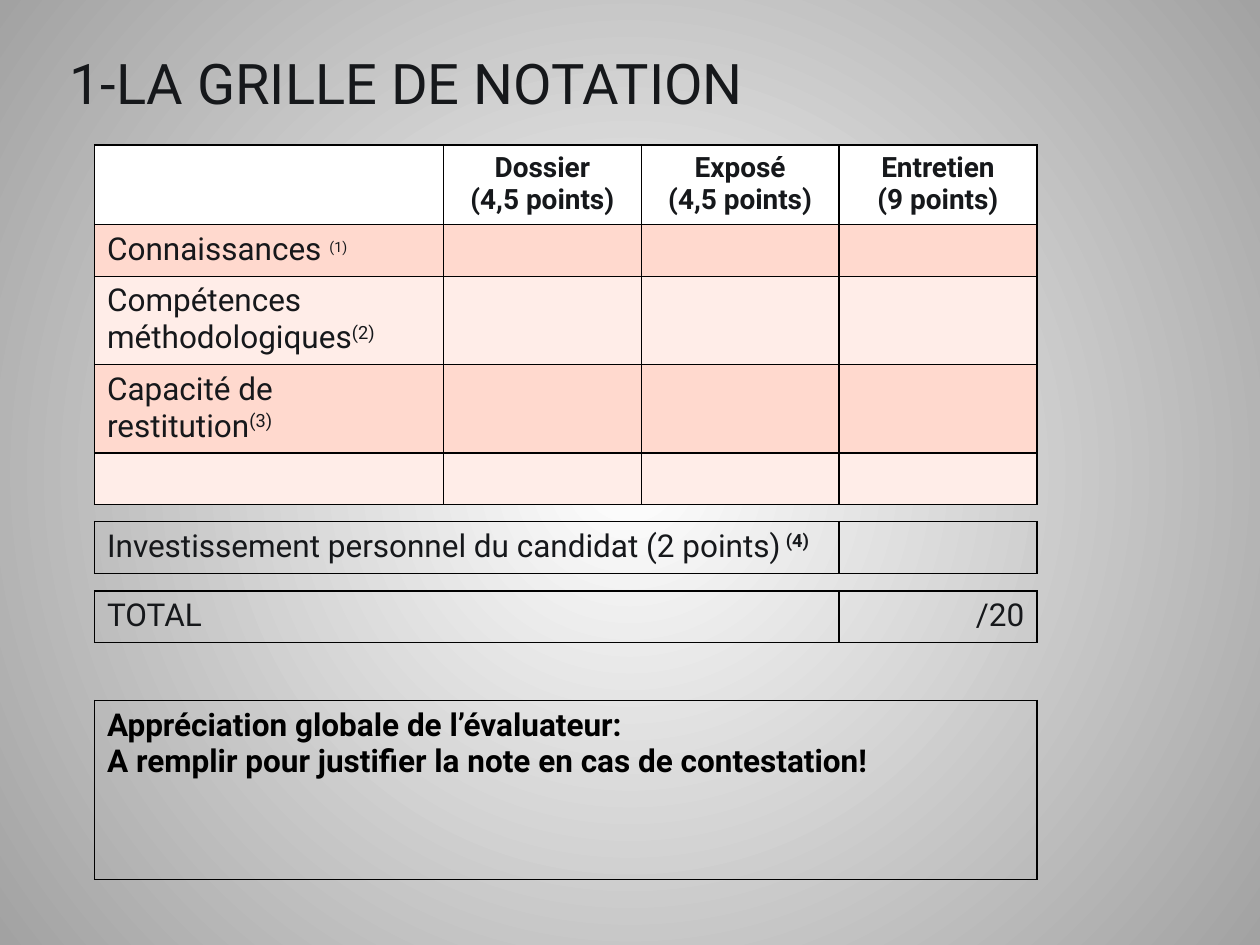
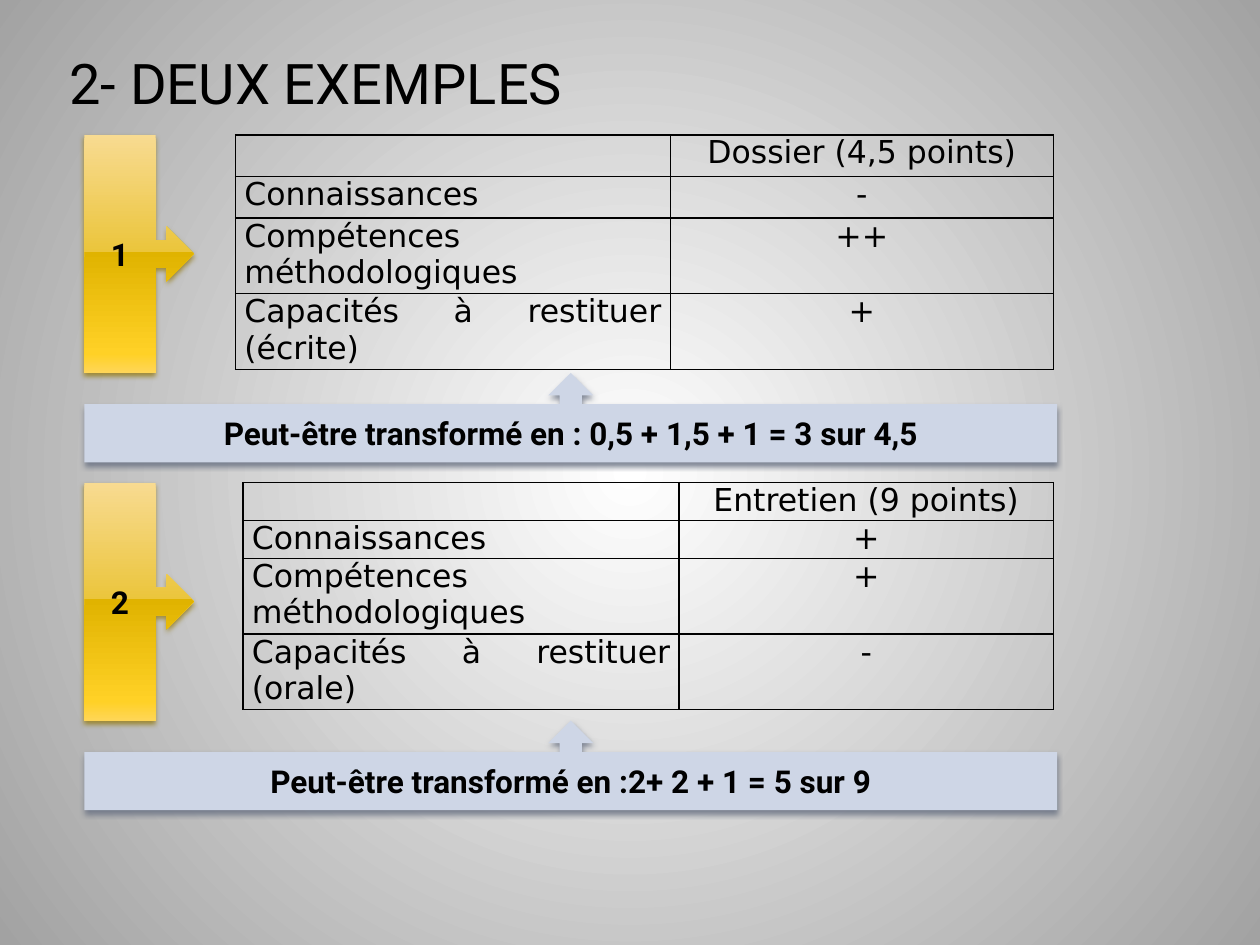
from pptx import Presentation
from pptx.dml.color import RGBColor
from pptx.enum.shapes import MSO_SHAPE
from pptx.enum.text import MSO_ANCHOR, PP_ALIGN
from pptx.oxml import parse_xml
from pptx.oxml.ns import nsdecls
from pptx.util import Inches, Pt

LEFT, CENTER, RIGHT, JUSTIFY = PP_ALIGN.LEFT, PP_ALIGN.CENTER, PP_ALIGN.RIGHT, PP_ALIGN.JUSTIFY
MIDDLE, BOTTOM = MSO_ANCHOR.MIDDLE, MSO_ANCHOR.BOTTOM
RIGHT_CALLOUT = MSO_SHAPE.RIGHT_ARROW_CALLOUT
UP_CALLOUT = MSO_SHAPE.UP_ARROW_CALLOUT

BLACK = RGBColor(0x00, 0x00, 0x00)
WHITE = RGBColor(0xFF, 0xFF, 0xFF)
INK = RGBColor(0x16, 0x18, 0x1B)
GREY = RGBColor(0xA2, 0xA2, 0xA2)
PEACH = RGBColor(0xFF, 0xD9, 0xCE)
PALE_PEACH = RGBColor(0xFF, 0xED, 0xE8)
PALE_BLUE = RGBColor(0xCE, 0xD6, 0xE6)
BLUE_SHADOW = RGBColor(0x6B, 0x73, 0x84)
GOLD_SHADOW = RGBColor(0x97, 0x7F, 0x1C)
GOLD_STOPS = [
    (0, RGBColor(0xF8, 0xDB, 0x91)),
    (49, RGBColor(0xEB, 0xC5, 0x3C)),
    (49, RGBColor(0xE0, 0xB3, 0x00)),
    (92, RGBColor(0xFF, 0xD1, 0x26)),
    (100, RGBColor(0xFF, 0xD6, 0x57)),
]
CIRCLE = ('<a:path path="circle"><a:fillToRect l="50000" t="50000" '
          'r="50000" b="50000"/></a:path>')
DOWNWARD = '<a:lin ang="5400000" scaled="0"/>'
MAIN_FONT, EXAMPLE_FONT = "Roboto", "DejaVu Sans"
ALL_SIDES = "LRTB"


def gradient_xml(stops, direction):
    """Return the markup of a gradient fill."""
    marks = "".join(f'<a:gs pos="{position * 1000}"><a:srgbClr val="{color}"/></a:gs>'
                    for position, color in stops)
    return f'<a:gradFill {nsdecls("a")}><a:gsLst>{marks}</a:gsLst>{direction}</a:gradFill>'


def style_paragraph(paragraph, size, color, bold=False, font=MAIN_FONT, align=LEFT):
    """Apply one font and alignment to a paragraph."""
    paragraph.alignment = align
    paragraph.font.name = font
    paragraph.font.size = Pt(size)
    paragraph.font.bold = bold
    paragraph.font.color.rgb = color


def new_slide(presentation, title, title_color):
    """Add a slide with the shared background and title."""
    slide = presentation.slides.add_slide(presentation.slide_layouts[6])
    gradient = gradient_xml([(0, WHITE), (100, GREY)], CIRCLE)
    slide.element.cSld.insert(0, parse_xml(
        f'<p:bg {nsdecls("p", "a")}><p:bgPr>{gradient}<a:effectLst/></p:bgPr></p:bg>'))
    box = slide.shapes.add_textbox(Inches(0.5), Inches(0.35), Inches(7.92), Inches(0.57))
    frame = box.text_frame
    frame.word_wrap = True
    frame.vertical_anchor = BOTTOM
    frame.margin_left = frame.margin_right = Inches(0.05)
    frame.margin_top = frame.margin_bottom = 0
    frame.text = title
    style_paragraph(frame.paragraphs[0], 32, title_color)
    return slide


def set_borders(cell, visible=ALL_SIDES):
    """Draw black borders on the visible sides and none on the others."""
    properties = cell._tc.get_or_add_tcPr()
    for side in ALL_SIDES:
        paint = (f'<a:solidFill><a:srgbClr val="{BLACK}"/></a:solidFill>'
                 if side in visible else "<a:noFill/>")
        properties.append(parse_xml(
            f'<a:ln{side} {nsdecls("a")} w="{Pt(1)}">{paint}</a:ln{side}>'))


def add_grid(slide, left, top, widths, heights):
    """Add a plain table with the given column widths and row heights."""
    frame = slide.shapes.add_table(len(heights), len(widths), Inches(left), Inches(top),
                                   Inches(sum(widths)), Inches(sum(heights)))
    table = frame.table
    table.first_row = table.horz_banding = False
    for column, width in zip(table.columns, widths):
        column.width = Inches(width)
    for row, height in zip(table.rows, heights):
        row.height = Inches(height)
    return table


def fill_cell(cell, text, fill=None, borders=ALL_SIDES, size=18, color=INK, **style):
    """Write a cell with its borders, fill and text style."""
    set_borders(cell, borders)
    if fill is None:
        cell.fill.background()
    else:
        cell.fill.solid()
        cell.fill.fore_color.rgb = fill
    cell.text = text
    for paragraph in cell.text_frame.paragraphs:
        style_paragraph(paragraph, size, color, **style)


def add_superscript(cell, text, size=18, bold=False):
    """Append a raised note mark to a cell."""
    run = cell.text_frame.paragraphs[0].add_run()
    run.text = text
    run.font.size = Pt(size)
    run.font.bold = bold
    run._r.get_or_add_rPr().set("baseline", "30000")


def add_scoring_table(slide, left, top, label_width, score_width):
    """Add the criteria table with one score column per test."""
    headers = ["", "Dossier\n(4,5 points)", "Exposé\n(4,5 points)", "Entretien\n(9 points)"]
    criteria = ["Connaissances ", "Compétences méthodologiques", "Capacité de restitution", ""]
    table = add_grid(slide, left, top, [label_width] + [score_width] * 3,
                     [0.63, 0.41, 0.69, 0.69, 0.41])
    for column, header in enumerate(headers):
        fill_cell(table.cell(0, column), header, WHITE, size=16, bold=True, align=CENTER)
    for row, criterion in enumerate(criteria, 1):
        for column in range(4):
            fill_cell(table.cell(row, column), "" if column else criterion,
                      PEACH if row % 2 else PALE_PEACH)
    for row, size in enumerate([14, 18, 18], 1):
        add_superscript(table.cell(row, 0), f"({row})", size)


def add_score_line(slide, left, top, widths, label, score):
    """Add a one-row table with a label and its score, and return the label cell."""
    table = add_grid(slide, left, top, widths, [0.41])
    fill_cell(table.cell(0, 0), label)
    fill_cell(table.cell(0, 1), score, align=RIGHT)
    return table.cell(0, 0)


def build_scoring_slide(presentation):
    """Build the slide of the scoring grid."""
    slide = new_slide(presentation, "1-LA GRILLE DE NOTATION", INK)
    left, label_width, score_width = 0.75, 2.77, 1.57
    widths = [label_width + 2 * score_width, score_width]
    add_scoring_table(slide, left, 1.15, label_width, score_width)
    investment = add_score_line(slide, left, 4.14, widths,
                                "Investissement personnel du candidat (2 points)", "")
    add_superscript(investment, " (4)", bold=True)
    add_score_line(slide, left, 4.69, widths, "TOTAL", "/20")
    comment = add_grid(slide, left, 5.56, [sum(widths)], [1.42])
    fill_cell(comment.cell(0, 0), "Appréciation globale de l’évaluateur:\n"
              "A remplir pour justifier la note en cas de contestation!",
              color=BLACK, bold=True)


def add_example_table(slide, left, top, widths, line_height, header, mode, marks):
    """Add the table of marks of one example, with a blank margin column."""
    labels = ["", "Connaissances", "Compétences méthodologiques",
              f"Capacités à restituer ({mode})"]
    table = add_grid(slide, left, top, widths, [line_height] * 2 + [0.58] * 2)
    for row, (label, mark) in enumerate(zip(labels, [header] + marks)):
        for column, text in enumerate(["", label, mark]):
            cell = table.cell(row, column)
            cell.margin_left = cell.margin_right = Inches(0.07)
            cell.margin_top = cell.margin_bottom = 0
            fill_cell(cell, text, borders=ALL_SIDES if column else "R", color=BLACK,
                      font=EXAMPLE_FONT, align=CENTER if column == 2 else JUSTIFY)


def add_callout(slide, kind, left, top, width, height, text, shadow):
    """Add a callout with a soft shadow below and bold centred text."""
    shape = slide.shapes.add_shape(kind, Inches(left), Inches(top),
                                   Inches(width), Inches(height))
    shape.line.fill.background()
    shape.fill.solid()
    shape.fill.fore_color.rgb = PALE_BLUE
    shape._element.spPr.append(parse_xml(
        f'<a:effectLst {nsdecls("a")}><a:outerShdw blurRad="{Pt(3.1)}" dist="{Pt(2)}" '
        f'dir="5400000" rotWithShape="0"><a:srgbClr val="{shadow}"><a:alpha val="83000"/>'
        '</a:srgbClr></a:outerShdw></a:effectLst>'))
    frame = shape.text_frame
    frame.word_wrap = True
    frame.vertical_anchor = MIDDLE
    frame.text = text
    style_paragraph(frame.paragraphs[0], 18, BLACK, bold=True, align=CENTER)
    return shape


def add_example(slide, top, number, conversion, **table):
    """Add one numbered example: marks, number callout and conversion bar."""
    left, callout_height = 0.67, 1.89
    add_example_table(slide, 1.69, top, **table)
    callout = add_callout(slide, RIGHT_CALLOUT, left, top, 0.87, callout_height,
                          str(number), GOLD_SHADOW)
    properties = callout._element.spPr
    properties.replace(properties.solidFill, parse_xml(gradient_xml(GOLD_STOPS, DOWNWARD)))
    add_callout(slide, UP_CALLOUT, left, top + callout_height, 7.72, 0.71,
                conversion, BLUE_SHADOW)


def build_examples_slide(presentation):
    """Build the slide of the two worked examples."""
    slide = new_slide(presentation, "2- DEUX EXEMPLES", BLACK)
    add_example(slide, 1.07, 1, "Peut-être transformé en : 0,5 + 1,5 + 1 = 3 sur 4,5",
                widths=[0.18, 3.45, 3.04], line_height=0.33,
                header="Dossier (4,5 points)", mode="écrite", marks=["-", "++", "+"])
    add_example(slide, 3.83, 2, "Peut-être transformé en :2+ 2 + 1 = 5 sur 9",
                widths=[0.24, 3.46, 2.97], line_height=0.29,
                header="Entretien (9 points)", mode="orale", marks=["+", "+", "-"])


def main():
    """Build and save the presentation."""
    presentation = Presentation()
    presentation.slide_width = Inches(10)
    presentation.slide_height = Inches(7.5)
    build_scoring_slide(presentation)
    build_examples_slide(presentation)
    presentation.save("out.pptx")


if __name__ == "__main__":
    main()
